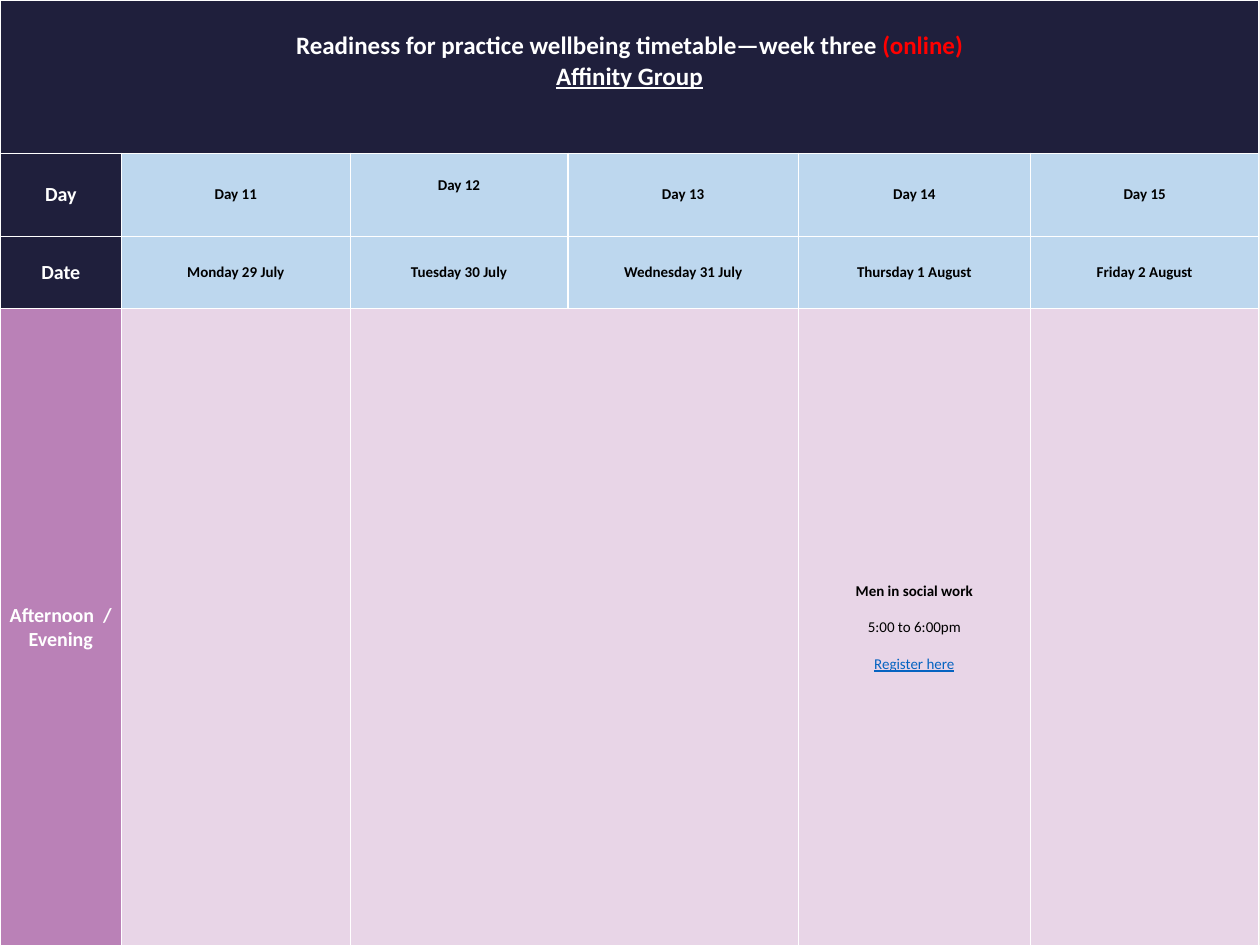
from lxml.etree import SubElement
from pptx import Presentation
from pptx.dml.color import RGBColor
from pptx.enum.text import MSO_ANCHOR, PP_ALIGN
from pptx.oxml.ns import qn
from pptx.util import Cm, Pt

WHITE = RGBColor(0xFF, 0xFF, 0xFF)
BLACK = RGBColor(0, 0, 0)
RED = RGBColor(0xFF, 0, 0)
NAVY = RGBColor(0x1F, 0x1F, 0x3C)
SKY = RGBColor(0xBD, 0xD7, 0xEE)
PLUM = RGBColor(0xBA, 0x81, 0xB7)
PINK = RGBColor(0xE8, 0xD5, 0xE7)
LINK = RGBColor(0x05, 0x63, 0xC1)
CREAM = RGBColor(0xF0, 0xEE, 0xE9)

WIDE, HIGH = 35.56, 26.67
COLS = [3.43, 6.45, 6.15, 6.5, 6.55, 6.45]
ROWS = [4.32, 2.36, 2.03, 18.01]
DATES = ["Monday 29 July", "Tuesday 30 July", "Wednesday 31 July",
         "Thursday 1 August", "Friday 2 August"]


def add_text(cell, text, size=12, color=BLACK, bold=True, line=False,
             new=True, gap=0):
    """Add a run to the cell, in a new paragraph unless new is False."""
    frame = cell.text_frame
    para = frame.paragraphs[-1]
    if new and para.runs:
        para = frame.add_paragraph()
    para.alignment = PP_ALIGN.CENTER
    if gap:
        para.space_before = Pt(gap)
    run = para.add_run()
    run.text = text
    font = run.font
    font.name, font.size, font.bold = "Calibri", Pt(size), bold
    font.underline = line
    font.color.rgb = color


def style(cell, fill):
    """Give the cell white borders, a fill and middle anchoring."""
    props = cell._tc.get_or_add_tcPr()
    for side in ("a:lnL", "a:lnR", "a:lnT", "a:lnB"):
        edge = SubElement(props, qn(side), w=str(Pt(1)))
        solid = SubElement(edge, qn("a:solidFill"))
        SubElement(solid, qn("a:srgbClr"), val=str(WHITE))
    cell.fill.solid()
    cell.fill.fore_color.rgb = fill
    cell.vertical_anchor = MSO_ANCHOR.MIDDLE


def add_grid(slide, left, top):
    shape = slide.shapes.add_table(len(ROWS), len(COLS), Cm(left), Cm(top),
                                   Cm(sum(COLS)), Cm(sum(ROWS)))
    table = shape.table
    for col, width in zip(table.columns, COLS):
        col.width = Cm(width)
    for row, height in zip(table.rows, ROWS):
        row.height = Cm(height)
    heads = [NAVY, NAVY, NAVY, PLUM]
    bodies = [NAVY, SKY, SKY, PINK]
    for r, (head, body) in enumerate(zip(heads, bodies)):
        for c in range(len(COLS)):
            style(table.cell(r, c), body if c else head)
    table.cell(0, 0).merge(table.cell(0, len(COLS) - 1))
    table.cell(3, 2).merge(table.cell(3, 3))
    return table


def fill_title(cell):
    cell.margin_bottom = Cm(0.98)
    add_text(cell, "Readiness for practice wellbeing timetable—week three ",
             size=20, color=WHITE)
    add_text(cell, "(online)", size=20, color=RED, new=False)
    add_text(cell, "Affinity Group", size=20, color=WHITE, line=True)


def fill_days(table):
    for r, label in enumerate(["Day", "Date"], 1):
        add_text(table.cell(r, 0), label, size=16, color=WHITE)
    for c, date in enumerate(DATES, 1):
        add_text(table.cell(1, c), f"Day {c + 10}")
        add_text(table.cell(2, c), date)
    table.cell(1, 2).margin_bottom = Cm(0.64)


def fill_events(table):
    for label in ("Afternoon  /", "Evening"):
        add_text(table.cell(3, 0), label, size=16, color=WHITE)
    event = table.cell(3, 4)
    add_text(event, "Men in social work")
    add_text(event, "5:00 to 6:00pm", bold=False, gap=14.6)
    add_text(event, "Register here", color=LINK, bold=False, line=True,
             gap=14.6)


def main():
    deck = Presentation()
    deck.slide_width, deck.slide_height = Cm(WIDE), Cm(HIGH)
    slide = deck.slides.add_slide(deck.slide_layouts[6])
    slide.background.fill.solid()
    slide.background.fill.fore_color.rgb = CREAM
    table = add_grid(slide, 0, 0)
    fill_title(table.cell(0, 0))
    fill_days(table)
    fill_events(table)
    deck.save("out.pptx")


if __name__ == "__main__":
    main()
